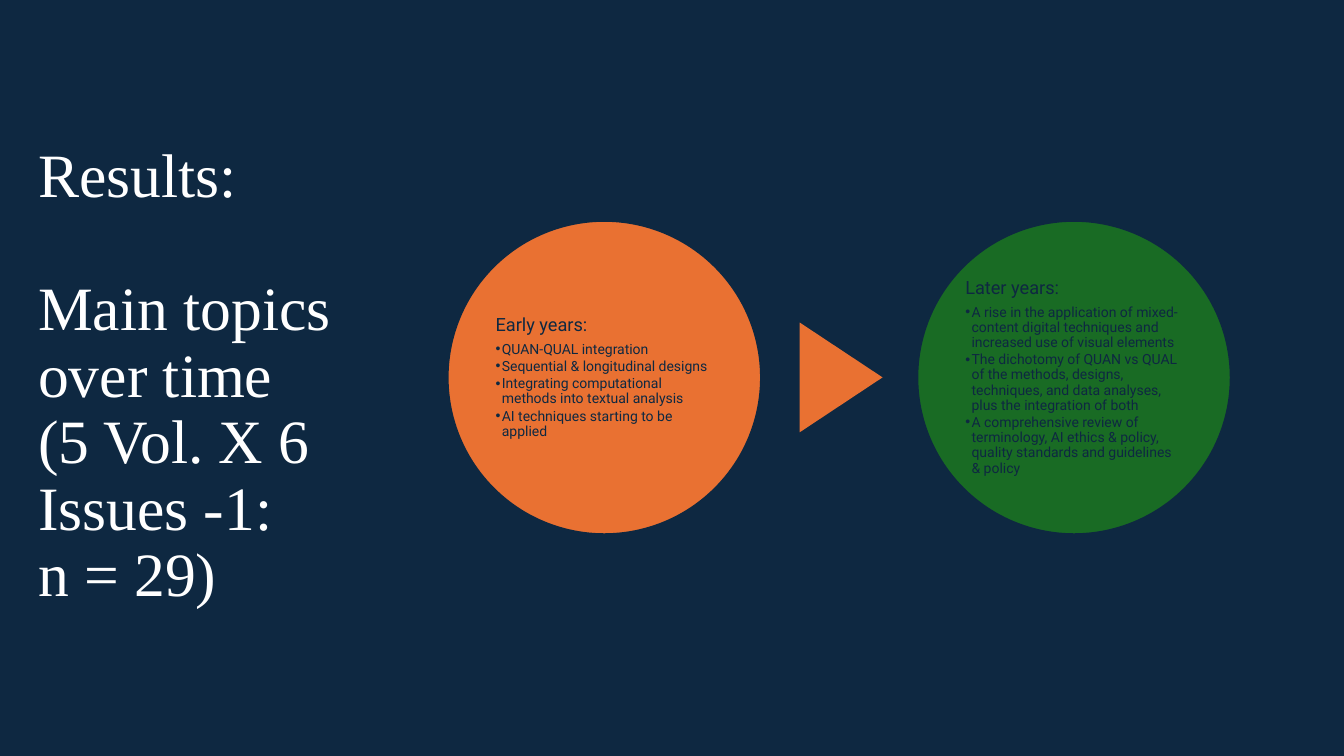
from lxml.etree import SubElement
from pptx import Presentation
from pptx.dml.color import RGBColor
from pptx.enum.shapes import MSO_SHAPE
from pptx.enum.text import MSO_ANCHOR, MSO_AUTO_SIZE, PP_ALIGN
from pptx.oxml.ns import qn
from pptx.util import Pt

NAVY, ORANGE, GREEN, WHITE = "0E2841", "E97132", "196B24", "FFFFFF"
TITLE = "Results:\v\vMain topics over time\v(5 Vol. X 6 Issues -1: \vn = 29)"
PERIODS = [
    ("Early years:", ORANGE, [
        "QUAN-QUAL integration",
        "Sequential & longitudinal designs",
        "Integrating computational methods into textual analysis",
        "AI techniques starting to be applied",
    ]),
    ("Later years:", GREEN, [
        "A rise in the application of mixed-content digital techniques and increased use of visual elements",
        "The dichotomy of QUAN vs QUAL of the methods, designs, techniques, and data analyses, "
        "plus the integration of both",
        "A comprehensive review of terminology, AI ethics & policy, quality standards and guidelines & policy",
    ]),
]
CIRCLE_LEFT, CIRCLE_TOP, CIRCLE_SIZE, CIRCLE_STEP = 319.7, 157.7, 224, 335.5
TEXT_INSET = 33


def color(value):
    return RGBColor.from_string(value)


class SlideBuilder:
    title_font = "Times New Roman"
    body_font = "Roboto"

    def __init__(self, slide):
        self.slide = slide
        slide.background.fill.solid()
        slide.background.fill.fore_color.rgb = color(NAVY)

    def place(self, shape, left, top, width, height):
        shape.left, shape.top = Pt(left), Pt(top)
        shape.width, shape.height = Pt(width), Pt(height)

    def format_frame(self, text_frame):
        text_frame.word_wrap = True
        text_frame.auto_size = MSO_AUTO_SIZE.NONE
        text_frame.vertical_anchor = MSO_ANCHOR.MIDDLE

    def format_paragraph(self, paragraph, name, size, fill, after=0):
        paragraph.alignment = PP_ALIGN.LEFT
        paragraph.line_spacing = 0.9
        paragraph.space_before = Pt(0)
        paragraph.space_after = Pt(after)
        for run in paragraph.runs:
            run.font.name = name
            run.font.size = Pt(size)
            run.font.color.rgb = color(fill)

    def title(self, text, left, top, width, height):
        shape = self.slide.shapes.title
        self.place(shape, left, top, width, height)
        self.format_frame(shape.text_frame)
        shape.text_frame.text = text
        self.format_paragraph(shape.text_frame.paragraphs[0], self.title_font, 44, WHITE)

    def shape(self, kind, left, top, width, height, fill, outline=None):
        shape = self.slide.shapes.add_shape(kind, Pt(left), Pt(top), Pt(width), Pt(height))
        shape.shadow.inherit = False
        shape.fill.solid()
        shape.fill.fore_color.rgb = color(fill)
        if outline:
            shape.line.color.rgb = color(outline)
            shape.line.width = Pt(1.5)
        else:
            shape.line.fill.background()
        return shape

    def bullet(self, paragraph, indent, character=None):
        properties = paragraph._p.get_or_add_pPr()
        properties.set("marL", str(Pt(indent)))
        properties.set("indent", str(Pt(-indent)))
        if character:
            SubElement(properties, qn("a:buChar")).set("char", character)
        else:
            SubElement(properties, qn("a:buNone"))

    def topics(self, placeholder, heading, items, left, top, size):
        self.slide.shapes.element.append(placeholder.element)
        self.place(placeholder, left, top, size, size)
        text_frame = placeholder.text_frame
        self.format_frame(text_frame)
        text_frame.margin_left = text_frame.margin_right = Pt(1.3)
        text_frame.margin_top = text_frame.margin_bottom = Pt(1.3)
        text_frame.text = "\n".join([heading] + items)
        first, *others = text_frame.paragraphs
        self.bullet(first, 0)
        self.format_paragraph(first, self.body_font, 13, NAVY, 4.55)
        for paragraph in others:
            paragraph.level = 1
            self.bullet(paragraph, 4.5, "•")
            self.format_paragraph(paragraph, self.body_font, 10, NAVY, 1.5)


def main():
    presentation = Presentation()
    presentation.slide_width, presentation.slide_height = Pt(960), Pt(540)
    slide = presentation.slides.add_slide(presentation.slide_layouts[3])
    builder = SlideBuilder(slide)
    builder.title(TITLE, 20, 88.5, 232, 362)

    bodies = [slide.placeholders[1], slide.placeholders[2]]
    for index, (body, (heading, fill, items)) in enumerate(zip(bodies, PERIODS)):
        left = CIRCLE_LEFT + index * CIRCLE_STEP
        builder.shape(MSO_SHAPE.OVAL, left, CIRCLE_TOP, CIRCLE_SIZE, CIRCLE_SIZE, fill, NAVY)
        builder.topics(body, heading, items, left + TEXT_INSET, CIRCLE_TOP + TEXT_INSET,
                       CIRCLE_SIZE - 2 * TEXT_INSET)
    arrow = builder.shape(MSO_SHAPE.ISOSCELES_TRIANGLE, 561.6, 240, 78.4, 59.2, ORANGE)
    arrow.rotation = 90

    for placeholder in list(slide.placeholders):
        if not placeholder.text_frame.text:
            placeholder.element.getparent().remove(placeholder.element)
    presentation.save("out.pptx")


if __name__ == "__main__":
    main()
